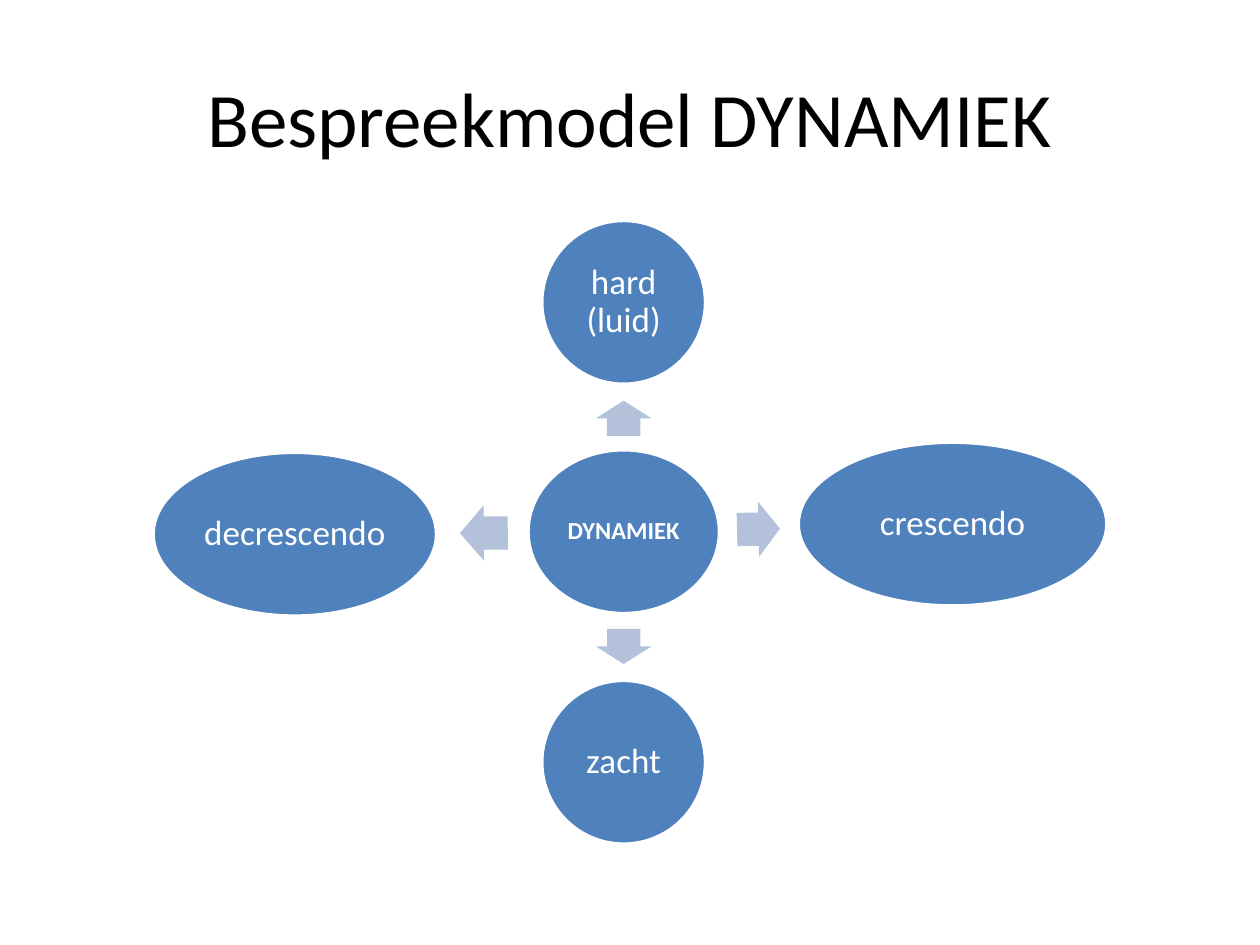
"""Builds a slide with the discussion model for musical dynamics."""
from pptx import Presentation
from pptx.dml.color import RGBColor
from pptx.enum import shapes, text
from pptx.util import Inches, Pt

BLUE = RGBColor(0x4F, 0x81, 0xBD)
PALE_BLUE = RGBColor(0xB3, 0xC1, 0xDB)
WHITE = RGBColor(0xFF, 0xFF, 0xFF)
BLACK = RGBColor(0x00, 0x00, 0x00)

MIDDLE_X = 4.95
NODE_HEIGHT = 1.3
ARROW_HEIGHT = 0.44


class DiagramPage:
    font_name = "Calibri"

    def __init__(self, deck):
        self.page = deck.slides.add_slide(deck.slide_layouts[5])

    def style(self, para, size, color, bold=False):
        para.alignment = text.PP_ALIGN.CENTER
        para.font.name = self.font_name
        para.font.size = Pt(size)
        para.font.bold = bold
        para.font.color.rgb = color

    def title(self, words):
        box = self.page.shapes.title
        box.left, box.top = Inches(0.5), Inches(0.3)
        box.width, box.height = Inches(9), Inches(1.25)
        box.text_frame.text = words
        box.text_frame.vertical_anchor = text.MSO_ANCHOR.MIDDLE
        self.style(box.text_frame.paragraphs[0], 44, BLACK)

    def centred_shape(self, kind, x, y, width, height, color):
        shape = self.page.shapes.add_shape(
            kind, Inches(x - width / 2), Inches(y - height / 2),
            Inches(width), Inches(height))
        shape.shadow.inherit = False
        shape.fill.solid()
        shape.fill.fore_color.rgb = color
        return shape

    def node(self, words, x, y, width, size=20, bold=False, inset=0.03):
        oval = self.centred_shape(
            shapes.MSO_SHAPE.OVAL, x, y, width, NODE_HEIGHT, BLUE)
        oval.line.color.rgb = WHITE
        oval.line.width = Pt(2)
        frame = oval.text_frame
        frame.word_wrap = True
        frame.vertical_anchor = text.MSO_ANCHOR.MIDDLE
        frame.margin_left = frame.margin_right = Inches(inset)
        frame.margin_top = frame.margin_bottom = Inches(inset)
        para = frame.paragraphs[0]
        para.text = words
        para.line_spacing = 0.9
        self.style(para, size, WHITE, bold)

    def arrow(self, x, y, length, rotation):
        arrow = self.centred_shape(
            shapes.MSO_SHAPE.RIGHT_ARROW, x, y, length, ARROW_HEIGHT, PALE_BLUE)
        arrow.line.fill.background()
        arrow.adjustments[0] = 0.6
        arrow.adjustments[1] = 0.5
        arrow.rotation = rotation


def main():
    deck = Presentation()
    deck.slide_width, deck.slide_height = Inches(10), Inches(7.5)
    diagram = DiagramPage(deck)
    diagram.title("Bespreekmodel DYNAMIEK")
    diagram.node("DYNAMIEK", MIDDLE_X, 4.22, 1.52, size=14, bold=True, inset=0.02)

    branches = [
        ("hard (luid)", (MIDDLE_X, 2.4, 1.3), (MIDDLE_X, 3.32, 0.28, 270)),
        ("crescendo", (7.56, 4.16, 2.45), (6.02, 4.2, 0.34, 358.7)),
        ("zacht", (MIDDLE_X, 6.05, 1.3), (MIDDLE_X, 5.13, 0.28, 90)),
        ("decrescendo", (2.34, 4.24, 2.25), (3.84, 4.23, 0.38, 179.6)),
    ]
    for words, node_place, arrow_place in branches:
        diagram.arrow(*arrow_place)
        diagram.node(words, *node_place)
    deck.save("out.pptx")


if __name__ == "__main__":
    main()
